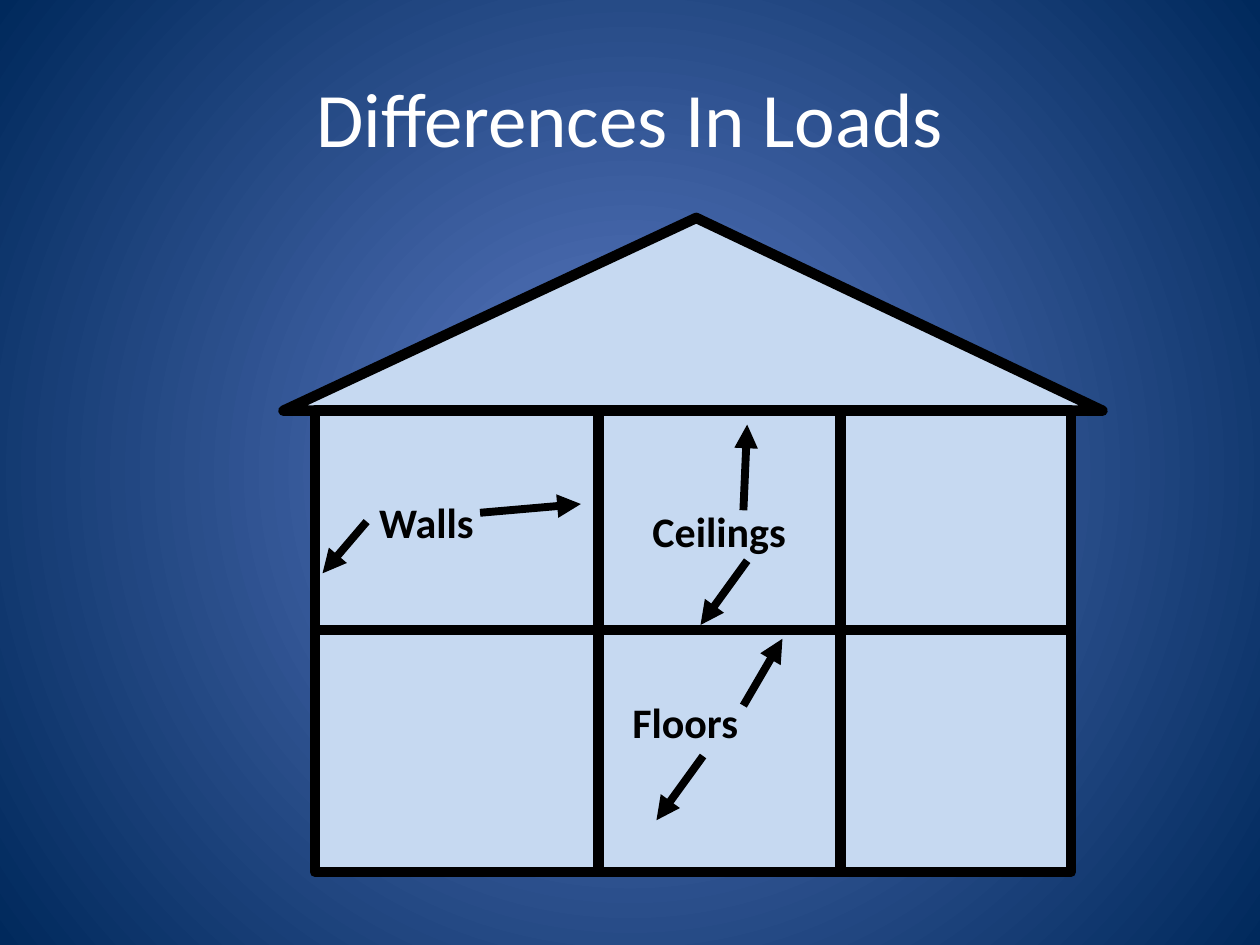
from lxml import etree
from pptx import Presentation
from pptx.dml.color import RGBColor
from pptx.enum.shapes import MSO_CONNECTOR, MSO_SHAPE
from pptx.enum.text import MSO_ANCHOR, PP_ALIGN
from pptx.oxml.ns import qn
from pptx.util import Inches, Pt

RECT, TRIANGLE = MSO_SHAPE.RECTANGLE, MSO_SHAPE.ISOSCELES_TRIANGLE
STRAIGHT = MSO_CONNECTOR.STRAIGHT
TOP, MIDDLE = MSO_ANCHOR.TOP, MSO_ANCHOR.MIDDLE
LEFT, CENTER = PP_ALIGN.LEFT, PP_ALIGN.CENTER

WHITE = RGBColor(0xFF, 0xFF, 0xFF)
BLACK = RGBColor(0, 0, 0)
WALL = RGBColor(0xC6, 0xD9, 0xF1)
GLOW = RGBColor(0x5E, 0x7C, 0xC5)
NAVY = RGBColor(0x00, 0x29, 0x5C)

TITLE = "Differences In Loads"
LABELS = [
    ("Floors", 4.92, 5.48, 1.34),
    ("Ceilings", 5.08, 3.96, 1.34),
    ("Walls", 2.91, 3.89, 1.58),
]
ARROWS = [
    (3.81, 4.07, 4.61, 4),
    (2.91, 4.14, 2.56, 4.55),
    (5.93, 4.45, 5.56, 4.96),
    (5.9, 4.05, 5.93, 3.37),
    (5.58, 6, 5.21, 6.51),
    (5.9, 5.6, 6.21, 5.07),
]
COLUMNS = [2.5, 4.75, 6.67, 8.5]
FLOORS = [3.26, 5, 6.92]
EAVES, ROOF_HEIGHT = 0.25, 1.53
ROOMS = [(0, 0), (1, 0), (2, 0), (1, 1)]


def set_background(s):
    fill = s.background.fill
    fill.gradient()
    for stop, color, position in zip(fill.gradient_stops, (GLOW, NAVY), (0, 1)):
        stop.color.rgb = color
        stop.position = position
    grad = s._element.find(".//" + qn("a:gradFill"))
    grad.remove(grad.find(qn("a:lin")))
    circle = etree.SubElement(grad, qn("a:path"), {"path": "circle"})
    etree.SubElement(circle, qn("a:fillToRect"), dict.fromkeys("ltrb", "50000"))


def add_block(s, kind, x1, y1, x2, y2):
    sp = s.shapes.add_shape(kind, *map(Inches, (x1, y1, x2 - x1, y2 - y1)))
    sp.shadow.inherit = False
    sp.fill.solid()
    sp.fill.fore_color.rgb = WALL
    sp.line.color.rgb = BLACK
    sp.line.width = Pt(6)
    etree.SubElement(sp.line._get_or_add_ln(), qn("a:round"))
    return sp


def add_text(s, text, x, y, w, h, size, color, bold=False, align=LEFT, anchor=TOP):
    tf = s.shapes.add_textbox(*map(Inches, (x, y, w, h))).text_frame
    tf.word_wrap = True
    tf.vertical_anchor = anchor
    p = tf.paragraphs[0]
    p.text = text
    p.alignment = align
    p.font.name, p.font.size, p.font.bold = "Calibri", Pt(size), bold
    p.font.color.rgb = color


def add_arrow(s, x1, y1, x2, y2):
    line = s.shapes.add_connector(STRAIGHT, *map(Inches, (x1, y1, x2, y2)))
    line.line.color.rgb = BLACK
    line.line.width = Pt(4.5)
    etree.SubElement(line.line._get_or_add_ln(), qn("a:tailEnd"), {"type": "triangle"})
    etree.SubElement(line._element.spPr, qn("a:effectLst"))


def main():
    prs = Presentation()
    prs.slide_width, prs.slide_height = Inches(10), Inches(7.5)
    s = prs.slides.add_slide(prs.slide_layouts[6])
    set_background(s)
    add_text(s, TITLE, 0.5, 0.3, 9, 1.25, 44, WHITE, align=CENTER, anchor=MIDDLE)

    left, right, top = COLUMNS[0], COLUMNS[-1], FLOORS[0]
    add_block(s, RECT, left, top, right, FLOORS[-1])
    roof = add_block(s, TRIANGLE, left - EAVES, top - ROOF_HEIGHT, right + EAVES, top)
    roof.adjustments[0] = 0.504
    for col, row in ROOMS:
        add_block(s, RECT, COLUMNS[col], FLOORS[row], COLUMNS[col + 1], FLOORS[row + 1])

    for text, x, y, w in LABELS:
        add_text(s, text, x, y, w, 0.5, 24, BLACK, bold=True)
    for ends in ARROWS:
        add_arrow(s, *ends)
    prs.save("out.pptx")


if __name__ == "__main__":
    main()
